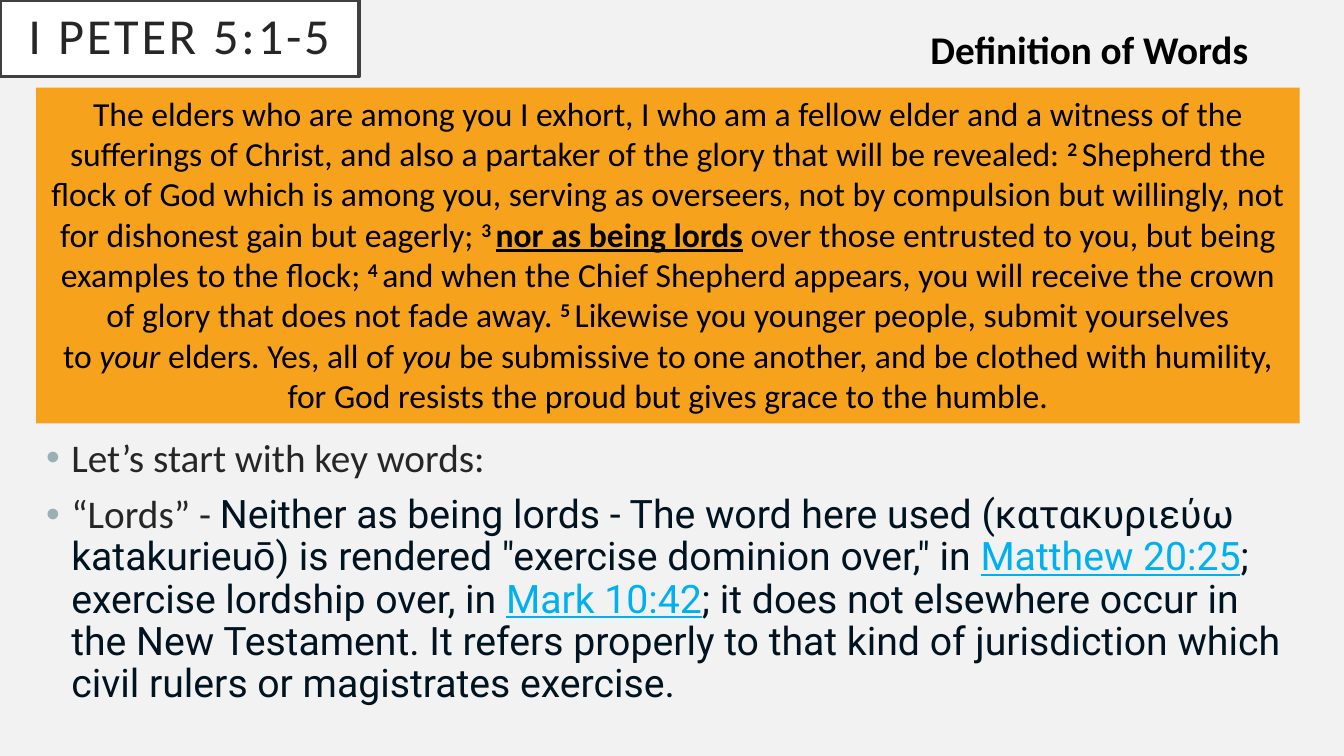
from pptx import Presentation
from pptx.dml.color import RGBColor
from pptx.enum.shapes import MSO_SHAPE
from pptx.enum.text import MSO_ANCHOR, PP_ALIGN
from pptx.oxml.xmlchemy import OxmlElement
from pptx.util import Inches, Pt

# Content: runs of (text, style); "~" stands for a no-break space
TITLE = [("I PETER 5:1-5", "title")]
TOPIC = [("Definition of Words", "bold")]
PASSAGE = [
    ("The elders who are among you I exhort, I who am a fellow elder and a~witness of the "
     "sufferings of Christ, and also a partaker of the~glory that will be revealed:~", "plain"),
    ("2~", "verse"),
    ("Shepherd the flock of God which is among you, serving as overseers,~not by compulsion "
     "but~willingly,~not for dishonest gain but eagerly;~", "plain"),
    ("3~", "verse"),
    ("nor as~being~lords", "key"),
    (" over~those entrusted to you, but~being examples to the flock;~", "plain"),
    ("4~", "verse"),
    ("and when~the Chief Shepherd appears, you will receive~the crown of glory that does not "
     "fade away. ", "plain"),
    ("5~", "verse"),
    ("Likewise you younger people, submit yourselves to~", "plain"),
    ("your", "italic"),
    ("~elders. Yes,~all of~", "plain"),
    ("you", "italic"),
    ("~be submissive to one another, and be clothed with humility, for God resists the proud "
     "but gives grace to the humble.", "plain"),
]
NOTES = [
    [("Let’s start with key words:", "note")],
    [("“Lords” - ", "note"),
     ("Neither as being lords - The word here used (κατακυριεύω katakurieuō) is rendered "
      "\"exercise dominion over,\" in~", "comment"),
     ("Matthew 20:25", "reference"),
     ("; exercise lordship over, in~", "comment"),
     ("Mark 10:42", "reference"),
     ("; it does not elsewhere occur in the New Testament. It refers properly to that kind of "
      "jurisdiction which civil rulers or magistrates exercise.", "comment")],
]

COLORS = {"back": "F2F2F2", "white": "FFFFFF", "frame": "404040", "text": "262626",
          "black": "000000", "panel": "F6A21D", "bullet": "9BAFB5", "navy": "001320",
          "blue": "00B0F0"}
# Style: colour, then font settings
STYLES = {
    "title": ("text", {}),
    "plain": ("black", {}),
    "bold": ("black", {"bold": True}),
    "verse": ("black", {"bold": True, "raised": True}),
    "key": ("black", {"bold": True, "underline": True}),
    "italic": ("black", {"italic": True}),
    "note": ("text", {}),
    "comment": ("navy", {"name": "Roboto"}),
    "reference": ("blue", {"name": "Roboto", "underline": True}),
}

# Layout in inches
WIDTH, HEIGHT = 13.33, 7.5
MARGIN = 0.36
COLUMN = 12.53
TITLE_BOX = (0, 0, 3.56, 0.76)
TOPIC_BOX = (9.13, 0.2, 3.77, 0.57)
PASSAGE_BOX = (MARGIN, 0.87, COLUMN, 3.33)
NOTES_BOX = (MARGIN, 4.3, COLUMN, 2.96)

prs = Presentation()
prs.slide_width, prs.slide_height = Inches(WIDTH), Inches(HEIGHT)
s = prs.slides.add_slide(prs.slide_layouts[6])


def rgb(name):
    return RGBColor.from_string(COLORS[name])


def add_box(box, fill=None, line=None):
    place = [Inches(v) for v in box]
    if fill is None:
        sp = s.shapes.add_textbox(*place)
    else:
        sp = s.shapes.add_shape(MSO_SHAPE.RECTANGLE, *place)
        sp.shadow.inherit = False
        sp.fill.solid()
        sp.fill.fore_color.rgb = rgb(fill)
        if line:
            sp.line.color.rgb = rgb(line)
            sp.line.width = Pt(2.5)
        else:
            sp.line.fill.background()
    sp.text_frame.word_wrap = True
    return sp.text_frame


def write(p, runs, size, align=PP_ALIGN.LEFT):
    p.alignment = align
    p.font.size, p.font.name = Pt(size), "Calibri"
    for text, style in runs:
        color, settings = STYLES[style]
        r = p.add_run()
        r.text = text.replace("~", chr(160))
        r.font.size, r.font.name = Pt(size), "Calibri"
        r.font.color.rgb = rgb(color)
        for key, value in settings.items():
            if key == "raised":
                r.font._element.set("baseline", "30000")
            else:
                setattr(r.font, key, value)


def add_bullet(p, color):
    pPr = p._p.get_or_add_pPr()
    pPr.set("marL", str(Inches(0.25)))
    pPr.set("indent", str(-Inches(0.25)))
    buClr = OxmlElement("a:buClr")
    srgb = OxmlElement("a:srgbClr")
    srgb.set("val", COLORS[color])
    buClr.append(srgb)
    buFont = OxmlElement("a:buFont")
    buFont.set("typeface", "Arial")
    buChar = OxmlElement("a:buChar")
    buChar.set("char", "•")
    at = next((i for i, e in enumerate(pPr) if e.tag.endswith("defRPr")), len(pPr))
    for i, e in enumerate((buClr, buFont, buChar)):
        pPr.insert(at + i, e)


# Background
s.background.fill.solid()
s.background.fill.fore_color.rgb = rgb("back")

# Framed title
tf = add_box(TITLE_BOX, "white", "frame")
tf.vertical_anchor = MSO_ANCHOR.MIDDLE
tf.margin_left = tf.margin_right = tf.margin_top = tf.margin_bottom = Inches(0.2)
write(tf.paragraphs[0], TITLE, 36, PP_ALIGN.CENTER)
tf.paragraphs[0].line_spacing = 0.9
tf.paragraphs[0].runs[0].font._element.set("spc", "200")

# Bulleted notes
tf = add_box(NOTES_BOX)
for i, runs in enumerate(NOTES):
    p = tf.add_paragraph() if i else tf.paragraphs[0]
    write(p, runs, 28)
    p.line_spacing, p.space_before = 0.9, Pt(10)
    add_bullet(p, "bullet")

# Bible passage
tf = add_box(PASSAGE_BOX, "panel")
tf.vertical_anchor = MSO_ANCHOR.TOP
write(tf.paragraphs[0], PASSAGE, 24, PP_ALIGN.CENTER)

# Topic
tf = add_box(TOPIC_BOX)
tf.word_wrap = False
write(tf.paragraphs[0], TOPIC, 28)

prs.save("out.pptx")
